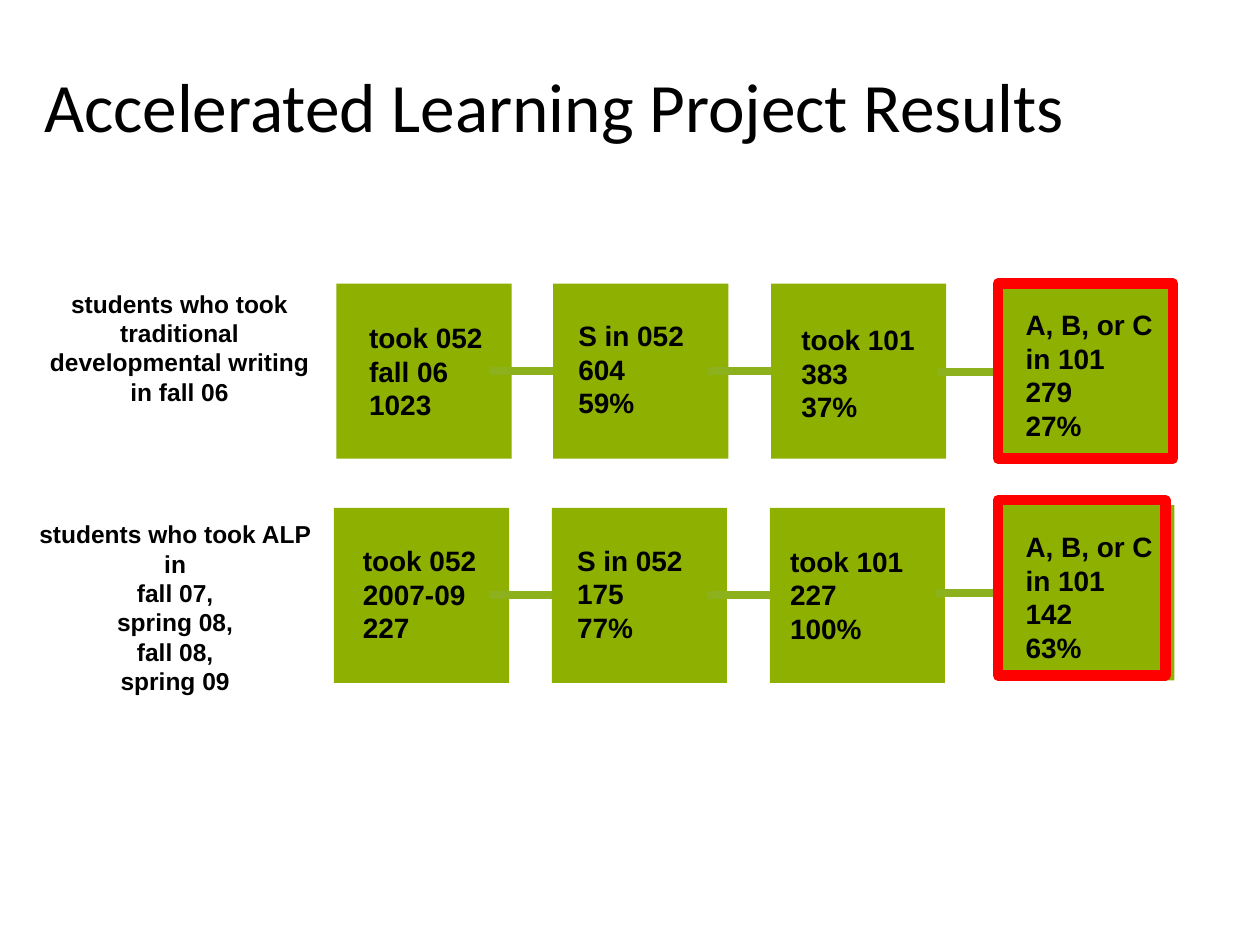
from lxml.etree import SubElement
from pptx import Presentation
from pptx.dml.color import RGBColor
from pptx.enum.shapes import MSO_CONNECTOR, MSO_SHAPE
from pptx.enum.text import MSO_ANCHOR, MSO_AUTO_SIZE, PP_ALIGN
from pptx.oxml.ns import qn
from pptx.util import Inches, Pt

COLORS = {"box": "8EB000", "link": "8DB01D", "frame": "FF0000", "text": "000000"}
BOX = 1.39
LINK = 0.5

TRADITIONAL = [
    (2.67, 2.25, (2.93, 2.54, 0.91, 0.81), ["took 052", "fall 06", "1023"]),
    (4.39, 2.25, (4.59, 2.56, 0.85, 0.74), ["S in 052", "604", "59%"]),
    (6.12, 2.25, (6.36, 2.59, 0.92, 0.74), ["took 101", "383", "37%"]),
    (7.94, 2.26, (8.14, 2.48, 1.03, 0.99), ["A, B, or C", "in 101", "279", "27%"]),
]
ALP = [
    (2.65, 4.03, (2.88, 4.31, 0.91, 0.81), ["took 052", "2007-09", "227"]),
    (4.38, 4.03, (4.58, 4.34, 0.85, 0.74), ["S in 052", "175", "77%"]),
    (6.11, 4.03, (6.27, 4.35, 0.92, 0.74), ["took 101", "227", "100%"]),
    (7.93, 4.01, (8.14, 4.24, 1.03, 0.99), ["A, B, or C", "in 101", "142", "63%"]),
]


def rgb(name):
    return RGBColor.from_string(COLORS[name])


def set_font(p, name, size, bold=False):
    p.font.name = name
    p.font.size = Pt(size)
    p.font.bold = bold
    p.font.color.rgb = rgb("text")


def set_title(s, text):
    sp = s.shapes.title
    sp.left, sp.top, sp.width, sp.height = map(Inches, (0.25, 0.42, 8.5, 0.83))
    tf = sp.text_frame
    tf.text = text
    tf.auto_size = MSO_AUTO_SIZE.NONE
    tf.vertical_anchor = MSO_ANCHOR.MIDDLE
    p = tf.paragraphs[0]
    p.alignment = PP_ALIGN.LEFT
    set_font(p, "Calibri", 39.6)


def add_text(s, at, lines, size, inset, align):
    tf = s.shapes.add_textbox(*map(Inches, at)).text_frame
    tf.margin_left = tf.margin_right = Inches(inset)
    tf.margin_top = tf.margin_bottom = Inches(inset)
    tf.text = "\n".join(lines)
    for p in tf.paragraphs:
        p.alignment = align
        set_font(p, "Arial", size, True)
    return tf


def add_row_label(s, at, lines):
    tf = add_text(s, at, lines, 14, 0.04, PP_ALIGN.CENTER)
    tf.word_wrap = True


def add_box_text(s, at, lines):
    tf = add_text(s, at, lines, 16, 0, PP_ALIGN.LEFT)
    tf.word_wrap = False
    tf.auto_size = MSO_AUTO_SIZE.SHAPE_TO_FIT_TEXT
    tf.vertical_anchor = MSO_ANCHOR.MIDDLE


def add_box(s, left, top):
    sp = s.shapes.add_shape(MSO_SHAPE.RECTANGLE, *map(Inches, (left, top, BOX, BOX)))
    sp.shadow.inherit = False
    sp.fill.solid()
    sp.fill.fore_color.rgb = rgb("box")
    sp.line.fill.background()
    return sp


def add_link(s, box, left, top):
    y = Inches(top + BOX / 2)
    link = s.shapes.add_connector(
        MSO_CONNECTOR.STRAIGHT, Inches(left - LINK), y, Inches(left), y)
    link.end_connect(box, 1)
    link.line.color.rgb = rgb("link")
    link.line.width = Pt(4.5)
    SubElement(link.element.spPr, qn("a:effectLst"))


def add_frame(s, at):
    sp = s.shapes.add_shape(MSO_SHAPE.RECTANGLE, *map(Inches, at))
    sp.shadow.inherit = False
    sp.fill.background()
    sp.line.color.rgb = rgb("frame")
    sp.line.width = Pt(6)


def add_flow(s, steps):
    for i, (left, top, text_at, lines) in enumerate(steps):
        box = add_box(s, left, top)
        if i:
            add_link(s, box, left, top)
        add_box_text(s, text_at, lines)


def main():
    prs = Presentation()
    prs.slide_width, prs.slide_height = Inches(10), Inches(7.5)
    s = prs.slides.add_slide(prs.slide_layouts[5])
    set_title(s, "Accelerated Learning Project Results")
    add_row_label(s, (0.33, 2.25, 2.19, 1.24),
                  ["students who took traditional developmental writing in fall 06"])
    add_row_label(s, (0.25, 4.08, 2.28, 1.57),
                  ["students who took ALP in", "fall 07,", "spring 08,", "fall 08,", "spring 09"])
    add_flow(s, TRADITIONAL)
    add_flow(s, ALP)
    add_frame(s, (7.92, 2.25, BOX, BOX))
    add_frame(s, (7.92, 3.97, 1.33, BOX))
    prs.save("out.pptx")


if __name__ == "__main__":
    main()
